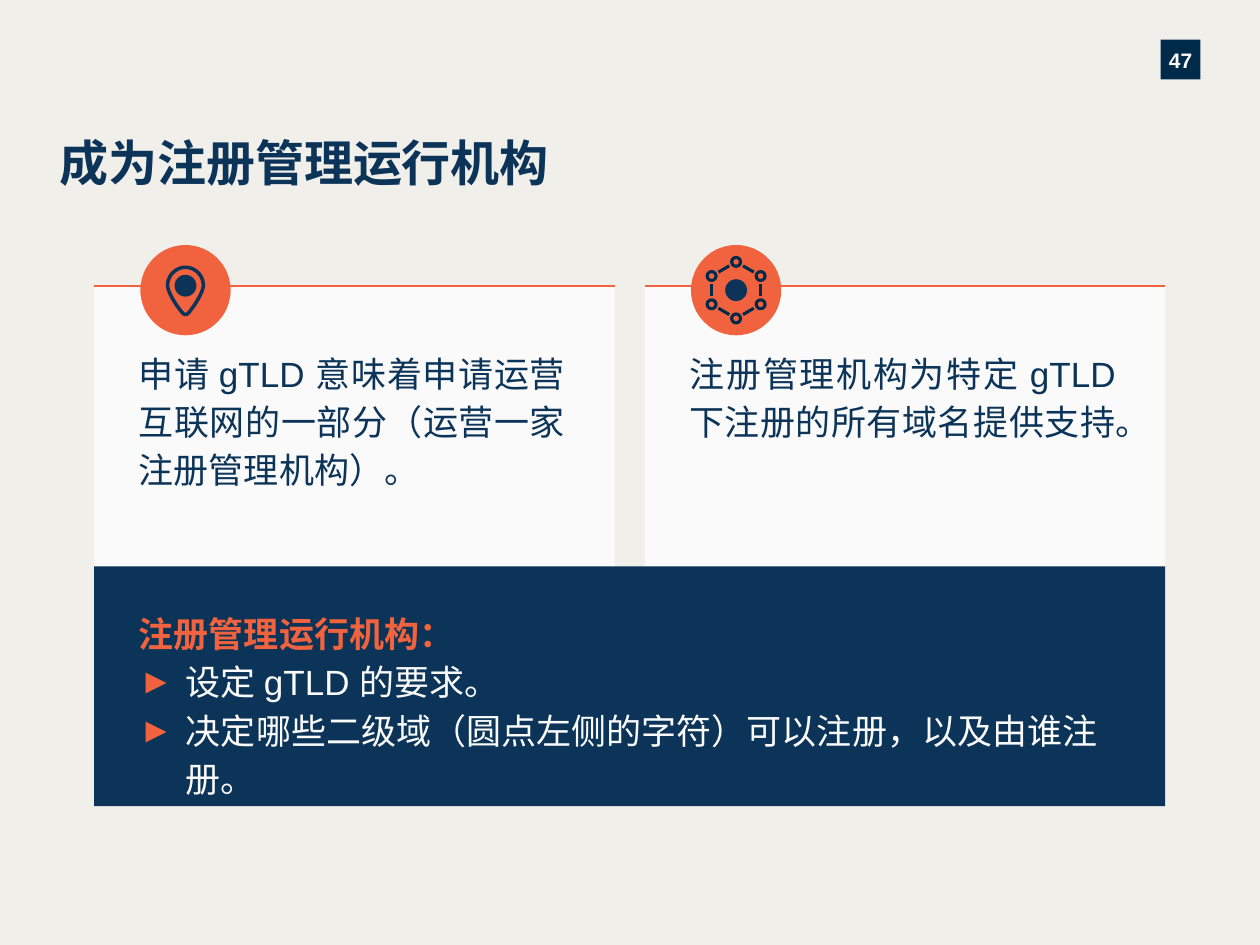
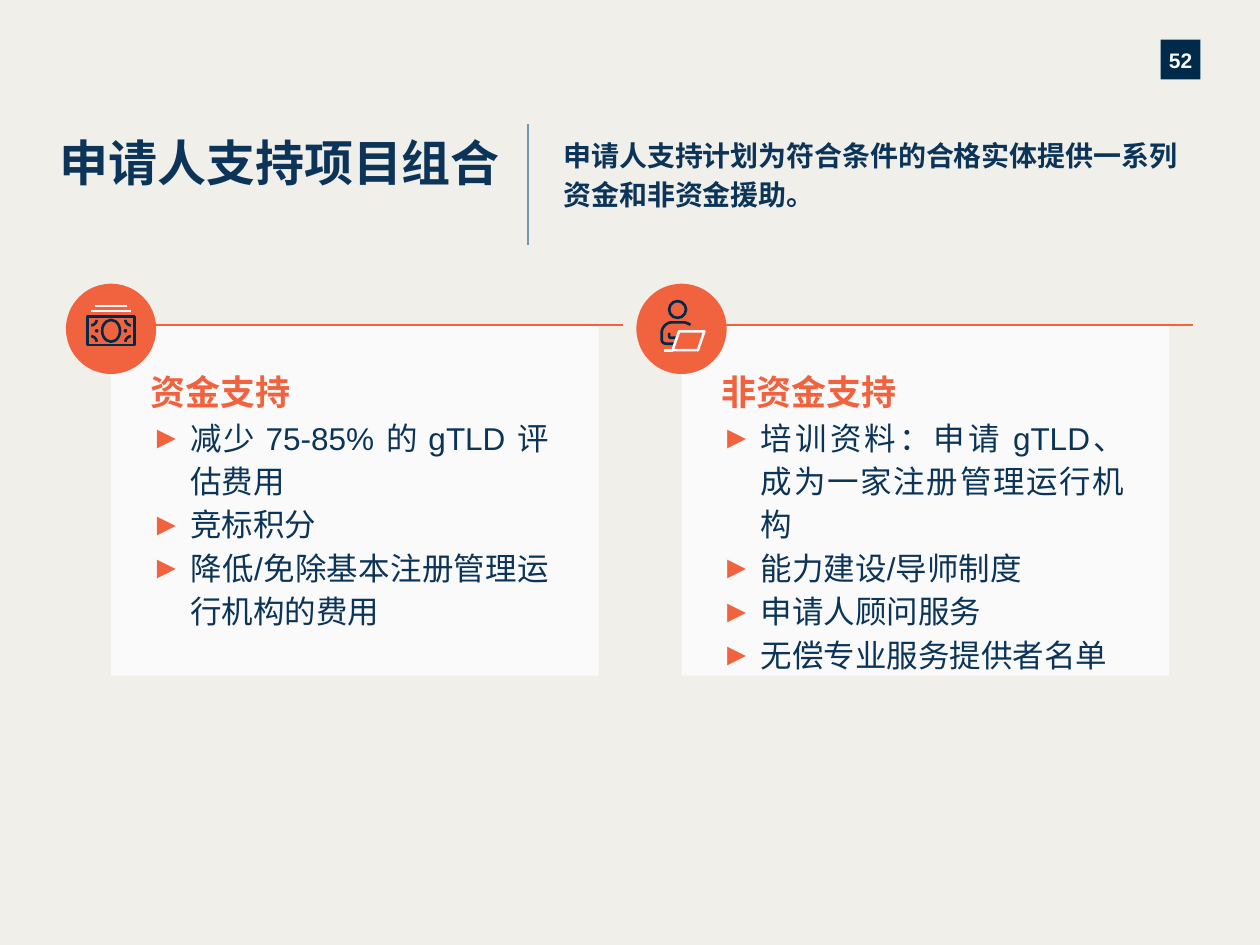
from itertools import product
from math import cos, radians, sin

from lxml.etree import SubElement
from pptx import Presentation
from pptx.dml.color import RGBColor
from pptx.enum.lang import MSO_LANGUAGE_ID as Lang
from pptx.enum.shapes import MSO_CONNECTOR as Connector, MSO_SHAPE as Preset
from pptx.enum.text import MSO_ANCHOR as Anchor, PP_ALIGN as Align
from pptx.oxml.ns import qn
from pptx.util import Cm, Pt

PAPER = RGBColor(0xF1, 0xEF, 0xEA)
WHITE = RGBColor(0xFA, 0xFA, 0xFA)
NAVY = RGBColor(0x0B, 0x34, 0x58)
INK = RGBColor(0x00, 0x2A, 0x49)
ORANGE = RGBColor(0xF1, 0x63, 0x3E)
STEEL = RGBColor(0x6D, 0x99, 0xB3)

BODY_FONT, TITLE_FONT = "Arial", "Noto Sans"
BADGE_RADIUS, BADGE_DROP = 0.91, 0.08

TITLE = {"size": Pt(28), "name": TITLE_FONT, "bold": True, "color": NAVY}
SUBTITLE = TITLE | {"size": Pt(16)}
BODY = {"size": Pt(20), "name": BODY_FONT, "bold": False, "color": NAVY}
HEADING = BODY | {"bold": True, "color": ORANGE}
PAGE_NUMBER = BODY | {"size": Pt(12), "bold": True, "color": WHITE}


def apply_formats(target, formats):
    for key, value in formats.items():
        if key == "color":
            target.color.rgb = value
        else:
            setattr(target, key, value)


def write(shape, paragraphs, insets=(0, 0, 0, 0), align=Align.LEFT,
          anchor=Anchor.TOP, spacing=1.15):
    """Fill a shape with (text, font formats, hanging indent in cm) paragraphs."""
    frame = shape.text_frame
    sides = ("margin_left", "margin_top", "margin_right", "margin_bottom")
    apply_formats(frame, {"word_wrap": True, "vertical_anchor": anchor}
                  | dict(zip(sides, map(Cm, insets))))
    for index, (text, font, hanging) in enumerate(paragraphs):
        paragraph = frame.add_paragraph() if index else frame.paragraphs[0]
        apply_formats(paragraph, {"alignment": align, "line_spacing": spacing})
        if hanging:
            add_bullet(paragraph, hanging)
        run = paragraph.add_run()
        run.text = text
        apply_formats(run.font, font | {"language_id": Lang.SIMPLIFIED_CHINESE})


def add_bullet(paragraph, hanging):
    properties = paragraph._p.get_or_add_pPr()
    properties.set("marL", str(Cm(hanging)))
    properties.set("indent", str(-Cm(hanging)))
    color = SubElement(properties, qn("a:buClr"))
    SubElement(color, qn("a:srgbClr")).set("val", str(ORANGE))
    SubElement(properties, qn("a:buFont")).set("typeface", BODY_FONT)
    SubElement(properties, qn("a:buChar")).set("char", "►")


def paint(shape, fill=None, line=None, weight=1.5):
    shape.shadow.inherit = False
    for part, color in ((shape.fill, fill), (shape.line.fill, line)):
        if color is None:
            part.background()
        else:
            part.solid()
            part.fore_color.rgb = color
    if line is not None:
        shape.line.width = Pt(weight)


def add_block(slide, left, top, width, height, preset=Preset.RECTANGLE, **style):
    block = slide.shapes.add_shape(preset, Cm(left), Cm(top), Cm(width), Cm(height))
    paint(block, **style)
    return block


def add_oval(slide, x, y, radius, radius_y=None, **style):
    """Draw an ellipse around its centre."""
    radius_y = radius_y or radius
    add_block(slide, x - radius, y - radius_y, 2 * radius, 2 * radius_y,
              Preset.OVAL, **style)


def add_rule(slide, x1, y1, x2, y2, color, weight=1.25):
    rule = slide.shapes.add_connector(Connector.STRAIGHT, Cm(x1), Cm(y1), Cm(x2), Cm(y2))
    rule.line.color.rgb = color
    rule.line.width = Pt(weight)
    SubElement(rule._element.spPr, qn("a:effectLst"))


def bezier(start, x1, y1, x2, y2, x3, y3, steps=12):
    controls = (start, (x1, y1), (x2, y2), (x3, y3))
    for step in range(1, steps + 1):
        t = step / steps
        weights = ((1 - t) ** 3, 3 * t * (1 - t) ** 2, 3 * t * t * (1 - t), t ** 3)
        yield tuple(sum(w * point[axis] for w, point in zip(weights, controls))
                    for axis in (0, 1))


def add_outline(slide, x, y, start, *segments, close=False, **style):
    """Trace segments around (x, y): two numbers make a line, six a curve."""
    points = [start]
    for segment in segments:
        points += [segment] if len(segment) == 2 else bezier(points[-1], *segment)
    points = [(Cm(x + dx), Cm(y + dy)) for dx, dy in points]
    builder = slide.shapes.build_freeform(*points[0])
    builder.add_line_segments(points[1:], close=close)
    paint(builder.convert_to_shape(), **style)


def draw_pin(slide, x, y):
    add_oval(slide, x, y - 0.09, 0.22, fill=NAVY)
    add_outline(slide, x, y, (0.06, 0.46),
                (0.03, 0.5, -0.03, 0.5, -0.06, 0.46),
                (-0.17, 0.33, -0.36, 0.05, -0.36, -0.1),
                (-0.36, -0.29, -0.2, -0.46, 0, -0.46),
                (0.2, -0.46, 0.36, -0.29, 0.36, -0.1),
                (0.36, 0.05, 0.17, 0.33, 0.06, 0.46),
                close=True, line=NAVY, weight=2)


def draw_network(slide, x, y):
    nodes = [(x + 0.57 * sin(radians(angle)), y - 0.57 * cos(radians(angle)))
             for angle in range(0, 360, 60)]
    for (x1, y1), (x2, y2) in zip(nodes, nodes[1:] + nodes[:1]):
        dx, dy = 0.28 * (x2 - x1), 0.28 * (y2 - y1)
        add_rule(slide, x1 + dx, y1 + dy, x2 - dx, y2 - dy, INK, 1.75)
    for node in nodes:
        add_oval(slide, *node, 0.09, line=INK, weight=1.75)
    add_oval(slide, x, y, 0.22, fill=NAVY)


def draw_banknotes(slide, x, y):
    middle = y + 0.04
    add_block(slide, x - 0.47, middle - 0.29, 0.94, 0.58, line=INK)
    add_oval(slide, x, middle, 0.18, 0.22, line=INK)
    for side in (-1, 1):
        add_oval(slide, x + side * 0.29, middle, 0.01, line=INK)
    for h, v in product((-1, 1), repeat=2):
        add_outline(slide, x, middle, (h * 0.4, v * 0.11),
                    (h * 0.35, v * 0.11, h * 0.29, v * 0.16, h * 0.29, v * 0.22),
                    line=INK)
    for rise, half in ((0.36, 0.4), (0.46, 0.33)):
        add_rule(slide, x - half, y - rise, x + half, y - rise, WHITE, 1.5)


def draw_adviser(slide, x, y):
    add_oval(slide, x - 0.08, y - 0.39, 0.17, line=INK)
    add_outline(slide, x, y, (-0.1, 0.18), (-0.23, 0.18), (-0.25, 0.16),
                (-0.25, 0.08), line=INK)
    add_outline(slide, x, y, (0.18, -0.08), (0.13, -0.11, 0.08, -0.13, 0.05, -0.13),
                (-0.2, -0.13), (-0.3, -0.13, -0.4, -0.03, -0.4, 0.08), (-0.4, 0.2),
                (-0.4, 0.28, -0.36, 0.3, -0.28, 0.3), (-0.13, 0.3), line=INK)
    add_rule(slide, x - 0.36, y + 0.43, x - 0.18, y + 0.43, WHITE, 1.5)
    add_outline(slide, x, y, (-0.05, 0.05), (-0.18, 0.43), (0.33, 0.43),
                (0.46, 0.05), close=True, line=WHITE)


def add_card(slide, left, top, size, rule_length, badge_offset, draw_icon,
             paragraphs, insets):
    """Panel with a line along its top and a round badge on that line."""
    panel = add_block(slide, left, top, *size, fill=WHITE)
    write(panel, paragraphs, insets, Align.JUSTIFY)
    add_rule(slide, left, top, left + rule_length, top, ORANGE)
    badge = left + badge_offset, top + BADGE_DROP
    add_oval(slide, *badge, BADGE_RADIUS, fill=ORANGE)
    draw_icon(slide, *badge)


def add_text(slide, left, top, width, height, text, font):
    box = slide.shapes.add_textbox(Cm(left), Cm(top), Cm(width), Cm(height))
    write(box, [(text, font, 0)])


def start_slide(deck, number, title, title_width):
    slide = deck.slides.add_slide(deck.slide_layouts[6])
    slide.background.fill.solid()
    slide.background.fill.fore_color.rgb = PAPER
    tag = add_block(slide, 23.4, 0.8, 0.8, 0.8, fill=INK)
    write(tag, [(number, PAGE_NUMBER, 0)], align=Align.CENTER,
          anchor=Anchor.MIDDLE, spacing=1.08)
    add_text(slide, 1.2, 2.5, title_width, 1.32, title, TITLE)
    return slide


def build_registry_slide(deck):
    slide = start_slide(deck, "47", "成为注册管理运行机构", 14.33)
    cards = [
        (draw_pin, "申请 gTLD 意味着申请运营互联网的一部分（运营一家注册管理机构）。"),
        (draw_network, "注册管理机构为特定 gTLD 下注册的所有域名提供支持。"),
    ]
    for column, (draw_icon, text) in enumerate(cards):
        add_card(slide, 1.9 + column * 11.1, 5.77, (10.49, 5.65), 10.49, 1.84,
                 draw_icon, [(text, BODY, 0)], (0.9, 1.2, 1, 0.75))
    duties = add_block(slide, 1.9, 11.42, 21.59, 4.83, fill=NAVY)
    white_body = BODY | {"color": WHITE}
    write(duties, [
        ("注册管理运行机构：", HEADING, 0),
        ("设定 gTLD 的要求。", white_body, 0.95),
        ("决定哪些二级域（圆点左侧的字符）可以注册，以及由谁注册。", white_body, 0.95),
    ], (0.9, 0.8, 1.2, 0.75))


def build_support_slide(deck):
    slide = start_slide(deck, "52", "申请人支持项目组合", 9.83)
    add_text(slide, 11.36, 2.7, 12.55, 1.57,
             "申请人支持计划为符合条件的合格实体提供一系列资金和非资金援助。", SUBTITLE)
    add_rule(slide, 10.64, 2.5, 10.64, 4.94, STEEL)
    cards = [
        (draw_banknotes, "资金支持", 1,
         ["减少 75-85% 的 gTLD 评估费用", "竞标积分", "降低/免除基本注册管理运行机构的费用"]),
        (draw_adviser, "非资金支持", 0.9,
         ["培训资料：申请 gTLD、成为一家注册管理运行机构", "能力建设/导师制度",
          "申请人顾问服务", "无偿专业服务提供者名单"]),
    ]
    item_font = BODY | {"size": Pt(18)}
    for column, (draw_icon, heading, right_inset, items) in enumerate(cards):
        paragraphs = [(heading, HEADING, 0)] + [(item, item_font, 0.8) for item in items]
        add_card(slide, 2.24 + column * 11.5, 6.55, (9.83, 7.07), 10.31, 0,
                 draw_icon, paragraphs, (0.8, 0.8, right_inset, 0.75))


def main():
    deck = Presentation()
    deck.slide_width, deck.slide_height = Cm(25.4), Cm(19.05)
    build_registry_slide(deck)
    build_support_slide(deck)
    deck.save("out.pptx")


if __name__ == "__main__":
    main()
